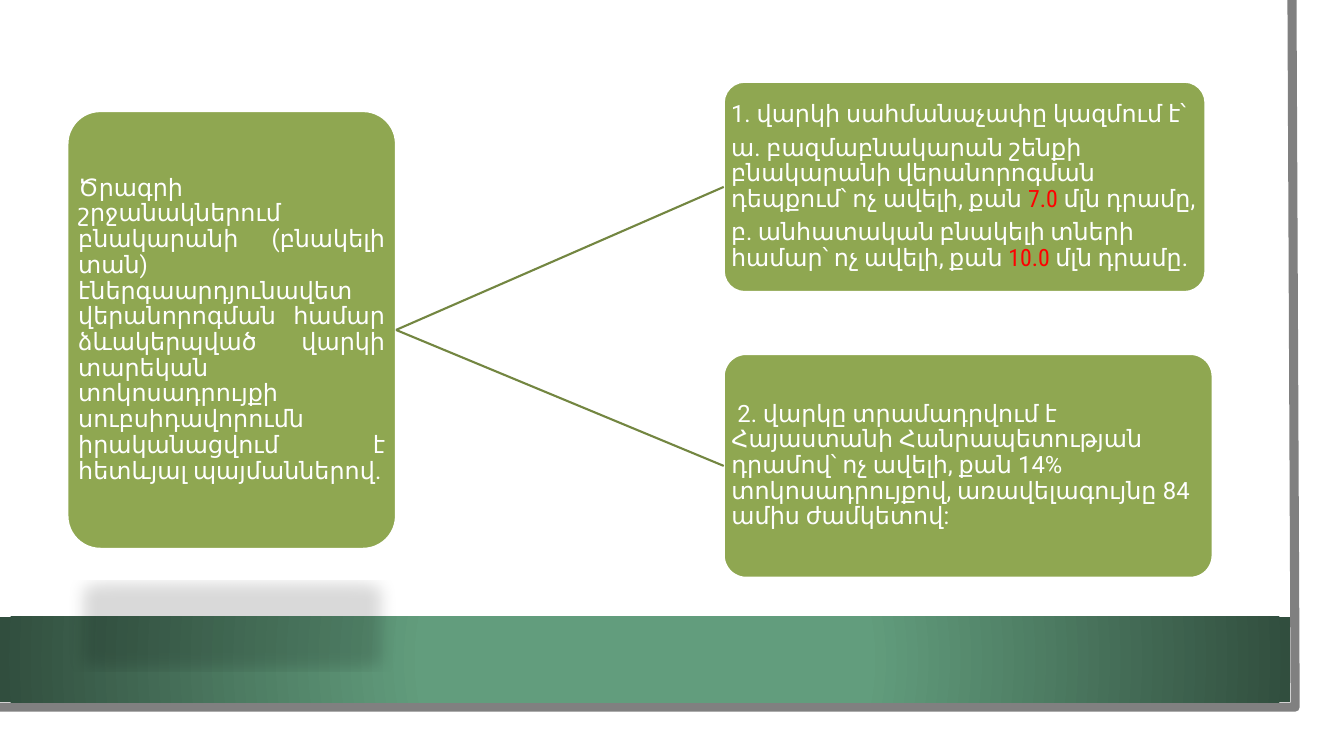
from lxml import etree
from pptx import Presentation
from pptx.dml.color import RGBColor
from pptx.enum.shapes import MSO_CONNECTOR as CONN, MSO_SHAPE as SHAPE
from pptx.enum.text import MSO_ANCHOR as ANCHOR, PP_ALIGN as ALIGN
from pptx.oxml import parse_xml
from pptx.oxml.ns import nsdecls, qn
from pptx.util import Cm, Pt

WHITE = RGBColor(0xFF, 0xFF, 0xFF)
GRAY = RGBColor(0x80, 0x80, 0x80)
OLIVE = RGBColor(0x8F, 0xA7, 0x51)
DARK_OLIVE = RGBColor(0x73, 0x86, 0x41)
RED = RGBColor(0xFF, 0x00, 0x00)
BAND_LIGHT = RGBColor(0x62, 0x9D, 0x7D)
BAND_DARK = RGBColor(0x31, 0x4E, 0x3E)

FONT, NARROW = "Roboto", "Roboto Condensed"
RIGHT_SITE, LEFT_SITE = 3, 1

# A run is (text, font, colour); a paragraph is a list of runs.
PROGRAMME = [[(
    "Ծրագրի շրջանակներում բնակարանի (բնակելի տան) էներգաարդյունավետ "
    "վերանորոգման համար ձևակերպված վարկի տարեկան տոկոսադրույքի "
    "սուբսիդավորումն իրականացվում է հետևյալ պայմաններով.", FONT, WHITE)]]
LOAN_LIMIT = [
    [("1. վարկի սահմանաչափը կազմում է՝", FONT, WHITE)],
    [("ա. բազմաբնակարան շենքի բնակարանի վերանորոգման դեպքում՝ ոչ ավելի, քան ",
      FONT, WHITE),
     ("7.0 ", NARROW, RED), ("մլն դրամը,", FONT, WHITE)],
    [("բ. անհատական բնակելի տների համար՝ ոչ ավելի, քան ", NARROW, WHITE),
     ("10.0 ", NARROW, RED), ("մլն դրամը.", NARROW, WHITE)],
]
LOAN_TERMS = [[(
    " 2. վարկը տրամադրվում է Հայաստանի Հանրապետության դրամով՝ ոչ ավելի, "
    "քան 14% տոկոսադրույքով, առավելագույնը 84 ամիս ժամկետով:", FONT, WHITE)]]


def add_block(slide, kind, box, color):
    s = slide.shapes.add_shape(kind, *(Cm(v) for v in box))
    s.shadow.inherit = False
    s.fill.solid()
    s.fill.fore_color.rgb = color
    s.line.fill.background()
    return s


def fill_radial(s, inner, outer):
    """Shade a shape from its centre to its edges."""
    pr = s._element.spPr
    pr.replace(pr.find(qn("a:solidFill")), parse_xml(
        f'<a:gradFill {nsdecls("a")} rotWithShape="1"><a:gsLst>'
        f'<a:gs pos="34000"><a:srgbClr val="{inner}"/></a:gs>'
        f'<a:gs pos="100000"><a:srgbClr val="{outer}"/></a:gs></a:gsLst>'
        '<a:path path="circle">'
        '<a:fillToRect l="50000" t="50000" r="50000" b="50000"/></a:path>'
        '</a:gradFill>'))


def add_floor_shadow(s):
    """Cast a flattened, blurred shadow below a shape."""
    s._element.spPr.find(qn("a:effectLst")).append(parse_xml(
        f'<a:outerShdw {nsdecls("a")} blurRad="152400" dist="317500" '
        'dir="5400000" sx="90000" sy="-19000" rotWithShape="0">'
        '<a:srgbClr val="000000"><a:alpha val="15000"/></a:srgbClr>'
        '</a:outerShdw>'))


def add_backdrop(slide, box):
    """White sheet with a gray right and bottom edge and a green band."""
    x, y, w, h = box
    add_block(slide, SHAPE.RECTANGLE, box, WHITE)

    right, bottom = x + w - 0.63, y + h - 0.65
    builder = slide.shapes.build_freeform(Cm(right - 0.08), Cm(y))
    builder.add_line_segments(
        [(Cm(right), Cm(bottom)), (Cm(x - 0.08), Cm(bottom))], close=False)
    edge = builder.convert_to_shape()
    edge.shadow.inherit = False
    edge.fill.background()
    edge.line.color.rgb = GRAY
    edge.line.width = Pt(6.5)

    band = add_block(slide, SHAPE.RECTANGLE,
                     (x, y + h - 2.93, w - 0.76, 2.16), BAND_LIGHT)
    fill_radial(band, BAND_LIGHT, BAND_DARK)


def add_card(slide, box, paragraphs, align=ALIGN.LEFT):
    s = add_block(slide, SHAPE.ROUNDED_RECTANGLE, box, OLIVE)
    s.adjustments[0] = 0.1
    s.line.color.rgb = WHITE
    s.line.width = Pt(1.5)

    tf = s.text_frame
    frame = {"word_wrap": True, "vertical_anchor": ANCHOR.MIDDLE}
    frame.update({f"margin_{side}": Cm(0.03)
                  for side in ("left", "top", "right", "bottom")})
    for name, value in frame.items():
        setattr(tf, name, value)

    for i, runs in enumerate(paragraphs):
        p = tf.add_paragraph() if i else tf.paragraphs[0]
        for name, value in {"alignment": align, "line_spacing": 0.9,
                            "space_after": Pt(5.5)}.items():
            setattr(p, name, value)
        for text, font, color in runs:
            r = p.add_run()
            r.text = text
            r.font.name = font
            r.font.size = Pt(17)
            r.font.color.rgb = color
    return s


def add_branch(slide, root, card):
    """Line from the right of the root card to the left of a condition."""
    c = slide.shapes.add_connector(CONN.STRAIGHT, 0, 0, 0, 0)
    c.begin_connect(root, RIGHT_SITE)
    c.end_connect(card, LEFT_SITE)
    c.line.color.rgb = DARK_OLIVE
    c.line.width = Pt(1.5)
    etree.SubElement(c._element.spPr, qn("a:effectLst"))


def add_conditions(slide, box):
    """Programme card on the left, branching to the two loan conditions."""
    x, y, w, h = box
    root = add_card(slide, (x, y + 0.74, 8.28, 11.03), PROGRAMME, ALIGN.JUSTIFY)
    add_floor_shadow(root)

    card_x, card_w = x + 16.54, w - 16.54
    limit = (card_x, y, card_w - 0.18, 5.3)
    terms = (card_x, y + h - 5.64, card_w, 5.64)
    for card_box, paragraphs in ((limit, LOAN_LIMIT), (terms, LOAN_TERMS)):
        add_branch(slide, root, add_card(slide, card_box, paragraphs))


def main():
    prs = Presentation()
    prs.slide_width, prs.slide_height = Cm(33.87), Cm(19.05)
    slide = prs.slides.add_slide(prs.slide_layouts[6])
    add_backdrop(slide, (0, 0, 33.27, 18.47))
    add_conditions(slide, (1.7, 2.06, 28.86, 12.5))
    prs.save("out.pptx")


if __name__ == "__main__":
    main()
